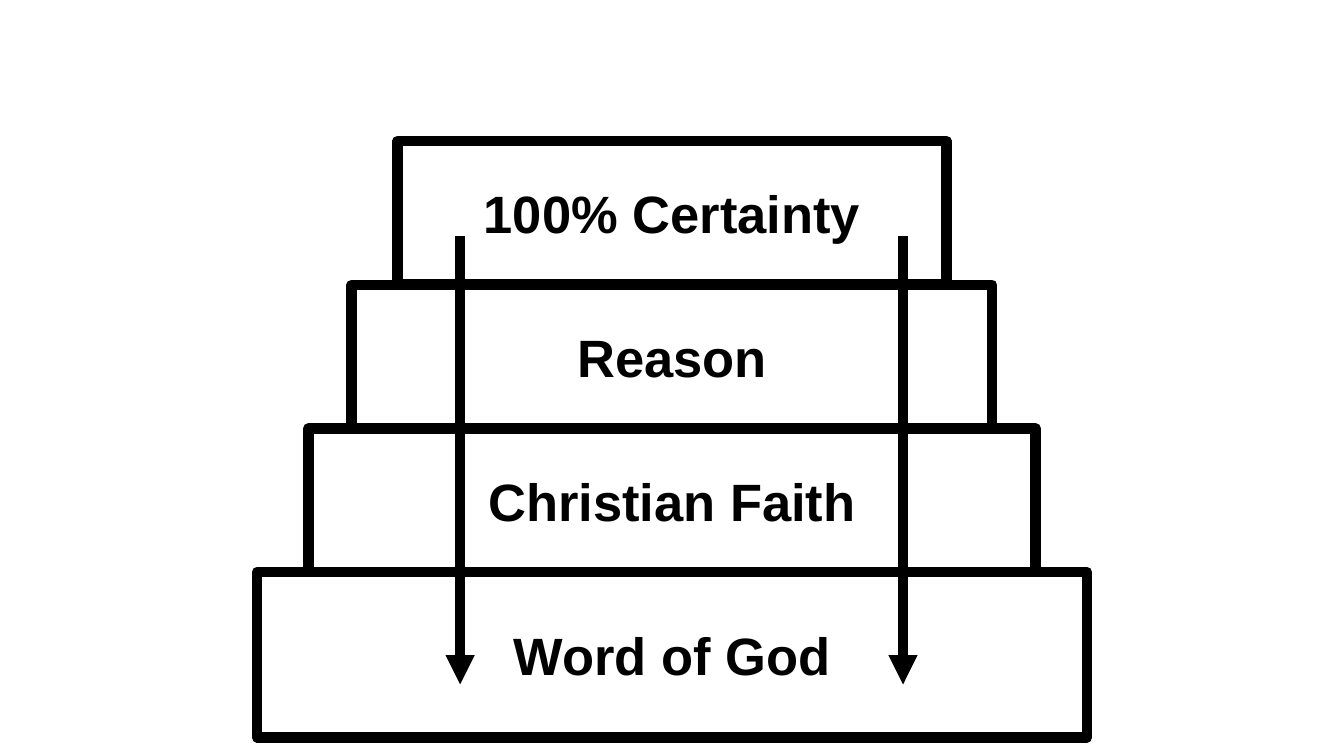
from lxml import etree
from pptx import Presentation
from pptx.dml.color import RGBColor
from pptx.enum.shapes import MSO_CONNECTOR, MSO_SHAPE
from pptx.enum.text import MSO_ANCHOR, PP_ALIGN
from pptx.oxml.ns import qn
from pptx.util import Inches, Pt

RECTANGLE = MSO_SHAPE.RECTANGLE
STRAIGHT = MSO_CONNECTOR.STRAIGHT
MIDDLE = MSO_ANCHOR.MIDDLE
CENTER = PP_ALIGN.CENTER

COLORS = {"ink": "000000"}
FONT = "Arial"
SLIDE_WIDTH, SLIDE_HEIGHT = 26.67, 15
STEP_HEIGHT, BASE_HEIGHT = 2.85, 3.28
STEPS = [
    ("100% Certainty", 10.9, STEP_HEIGHT),
    ("Reason", 12.71, STEP_HEIGHT),
    ("Christian Faith", 14.43, STEP_HEIGHT),
    ("Word of God", 16.47, BASE_HEIGHT),
]


def ink():
    return RGBColor.from_string(COLORS["ink"])


def add_step(slide, label, left, top, width, height):
    step = slide.shapes.add_shape(
        RECTANGLE, Inches(left), Inches(top), Inches(width), Inches(height))
    step.shadow.inherit = False
    step.fill.background()
    step.line.color.rgb = ink()
    step.line.width = Pt(15)
    frame = step.text_frame
    frame.word_wrap = True
    frame.vertical_anchor = MIDDLE
    frame.margin_left = frame.margin_right = Inches(0.06)
    frame.margin_top = frame.margin_bottom = Inches(0.06)
    paragraph = frame.paragraphs[0]
    paragraph.alignment = CENTER
    run = paragraph.add_run()
    run.text = label
    run.font.name = FONT
    run.font.size = Pt(75)
    run.font.bold = True
    run.font.color.rgb = ink()


def add_down_arrow(slide, x, top, bottom):
    arrow = slide.shapes.add_connector(
        STRAIGHT, Inches(x), Inches(top), Inches(x), Inches(bottom))
    arrow.line.color.rgb = ink()
    arrow.line.width = Pt(14)
    etree.SubElement(arrow.line._get_or_add_ln(), qn("a:tailEnd"), type="triangle")
    etree.SubElement(arrow._element.spPr, qn("a:effectLst"))


def add_pyramid(slide, left, top, width, height):
    center = left + width / 2
    bottom = top + height
    for label, step_width, step_height in reversed(STEPS):
        bottom -= step_height
        add_step(slide, label, center - step_width / 2, bottom, step_width, step_height)
    for offset in (4.03, 12.82):
        add_down_arrow(slide, left + offset, top + 1.88, top + 10.78)


def main():
    presentation = Presentation()
    presentation.slide_width = Inches(SLIDE_WIDTH)
    presentation.slide_height = Inches(SLIDE_HEIGHT)
    slide = presentation.slides.add_slide(presentation.slide_layouts[6])
    pyramid_width = max(width for _, width, _ in STEPS)
    pyramid_height = sum(height for _, _, height in STEPS)
    add_pyramid(slide, (SLIDE_WIDTH - pyramid_width) / 2, 2.8, pyramid_width, pyramid_height)
    presentation.save("out.pptx")


if __name__ == "__main__":
    main()
